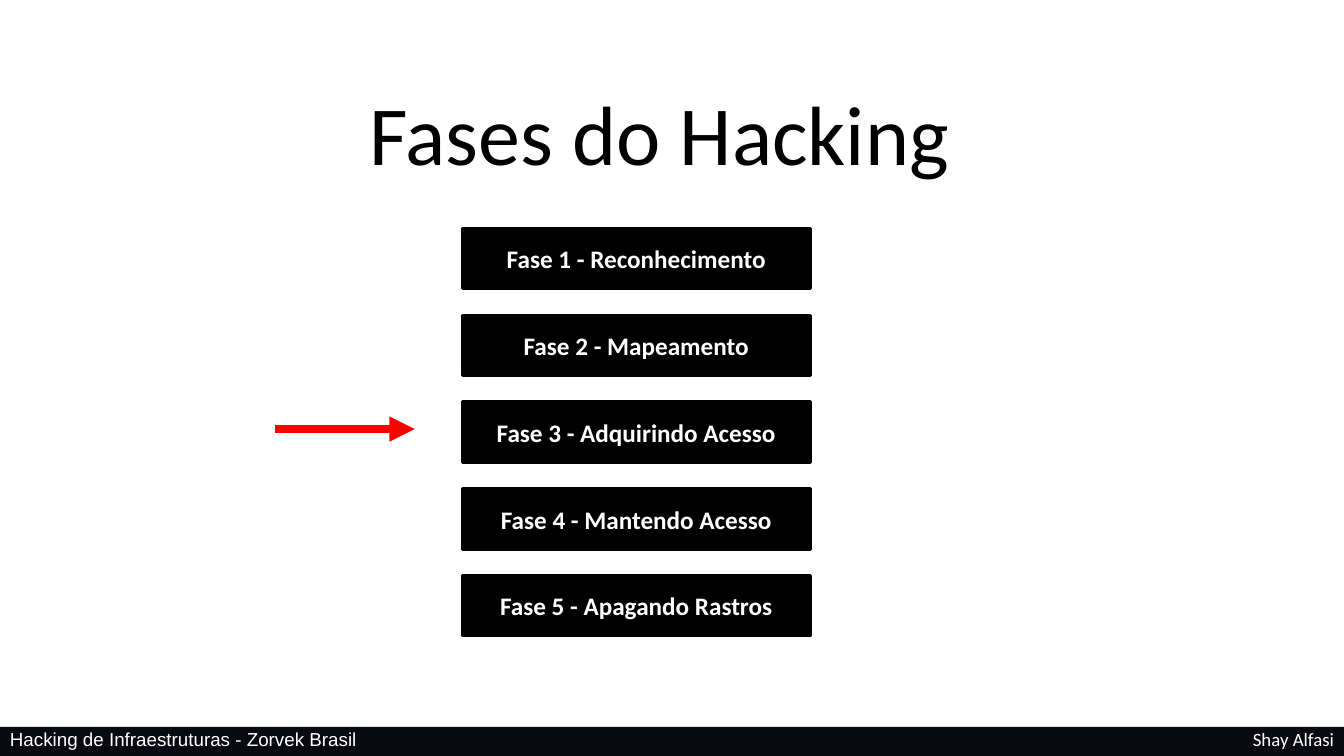
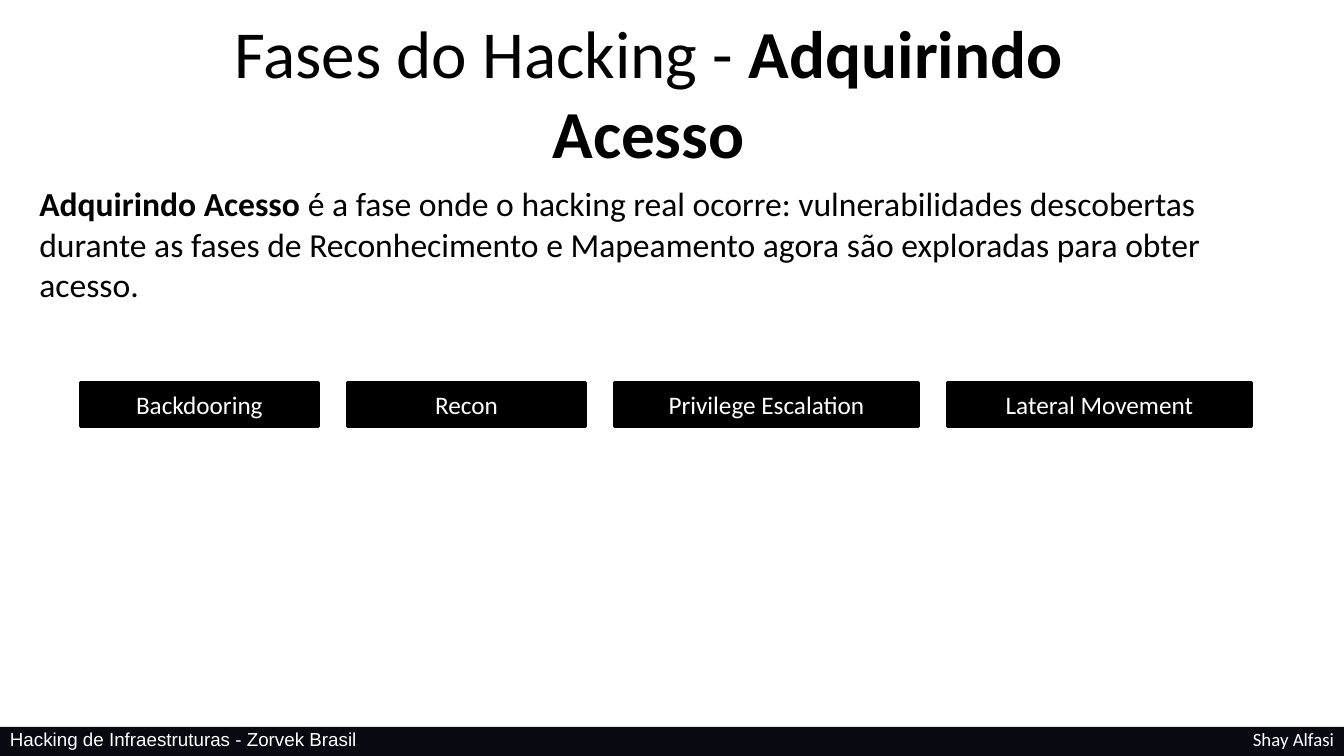
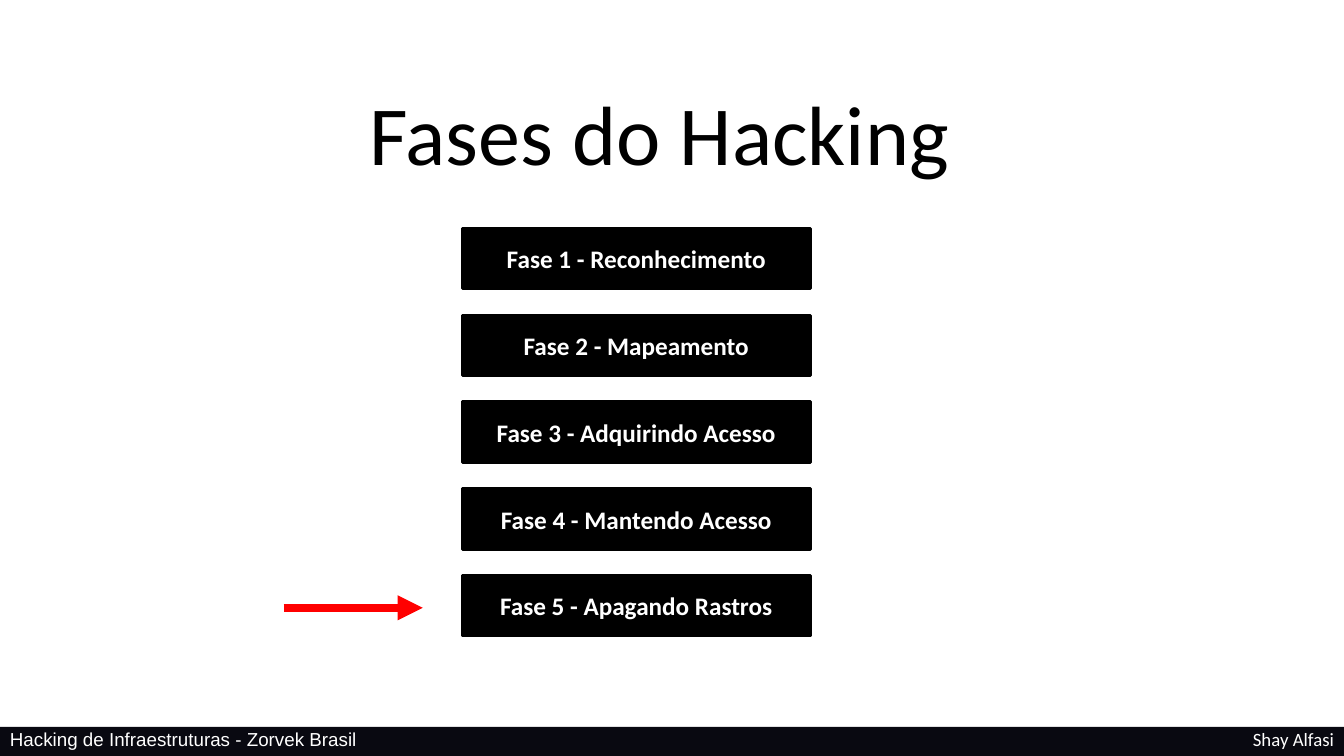
from dataclasses import dataclass
from itertools import accumulate

from lxml import etree
from pptx import Presentation
from pptx import util as u
from pptx.dml.color import RGBColor
from pptx.enum import shapes, text
from pptx.oxml import ns


@dataclass(frozen=True)
class Theme:
    width: float = 960
    height: float = 540
    black: RGBColor = RGBColor(0, 0, 0)
    white: RGBColor = RGBColor(255, 255, 255)
    band: RGBColor = RGBColor(0x09, 0x09, 0x11)
    red: RGBColor = RGBColor(255, 0, 0)
    font: str = "Calibri"
    footer_font: str = "Arial"
    large_title: float = 60
    title: float = 48
    body: float = 24
    label: float = 18
    footer: float = 13.4


THEME = Theme()
LEFT, CENTER, RIGHT = (
    text.PP_ALIGN.LEFT, text.PP_ALIGN.CENTER, text.PP_ALIGN.RIGHT)
TITLE_AND_CONTENT, TITLE_ONLY = 1, 5
PHASES = ["Reconhecimento", "Mapeamento", "Adquirindo Acesso",
          "Mantendo Acesso", "Apagando Rastros"]


def apply(target, values):
    for name, value in values.items():
        setattr(target, name, value)


def place(shape, box):
    apply(shape, dict(zip(("left", "top", "width", "height"), map(u.Pt, box))))


def write(shape, runs, size, color, align=LEFT, font=THEME.font,
          anchor=text.MSO_ANCHOR.TOP, insets=(7.2, 3.6, 7.2, 3.6), spacing=1.0):
    """Fill a shape with one paragraph of (wording, bold) runs."""
    frame = shape.text_frame
    sides = ("margin_left", "margin_top", "margin_right", "margin_bottom")
    apply(frame, {"word_wrap": True, "auto_size": text.MSO_AUTO_SIZE.NONE,
                  "vertical_anchor": anchor, **dict(zip(sides, map(u.Pt, insets)))})
    paragraph = frame.paragraphs[0]
    apply(paragraph, {"alignment": align, "line_spacing": spacing,
                      "space_before": u.Pt(0)})
    for wording, bold in runs:
        run = paragraph.add_run()
        run.text = wording
        apply(run.font, {"name": font, "size": u.Pt(size), "bold": bold})
        run.font.color.rgb = color
    return paragraph


def add_rectangle(slide, box, color, line_width=0):
    shape = slide.shapes.add_shape(shapes.MSO_SHAPE.RECTANGLE, *map(u.Pt, box))
    shape.shadow.inherit = False
    shape.fill.solid()
    shape.fill.fore_color.rgb = color
    if line_width:
        shape.line.color.rgb = color
        shape.line.width = u.Pt(line_width)
    else:
        shape.line.fill.background()
    return shape


def add_label(slide, box, wording, bold=False):
    shape = add_rectangle(slide, box, THEME.black, 2)
    write(shape, [(wording, bold)], THEME.label, THEME.white, CENTER,
          anchor=text.MSO_ANCHOR.MIDDLE)


def add_arrow(slide, left, middle, length):
    arrow = slide.shapes.add_connector(
        shapes.MSO_CONNECTOR.STRAIGHT,
        *map(u.Pt, (left, middle, left + length, middle)))
    arrow.line.color.rgb = THEME.red
    arrow.line.width = u.Pt(6)
    etree.SubElement(arrow.line._get_or_add_ln(), ns.qn("a:tailEnd"),
                     type="triangle")
    etree.SubElement(arrow.element.spPr, ns.qn("a:effectLst"))


def set_title(slide, box, runs, size, spacing=1.0):
    place(slide.shapes.title, box)
    write(slide.shapes.title, runs, size, THEME.black, CENTER,
          anchor=text.MSO_ANCHOR.BOTTOM, insets=(14.4, 0, 14.4, 0),
          spacing=spacing)


def add_master_footer(slide, box):
    """Draw the footer band and hand it over to the slide master."""
    left, top, width, height = box
    band = add_rectangle(slide, box, THEME.band)
    parts = [band]
    for wording, font, align, start, span in (
            ("Hacking de Infraestruturas - Zorvek Brasil", THEME.footer_font,
             LEFT, 0, 601),
            ("Shay Alfasi", THEME.font, RIGHT, width - 461, 461)):
        caption = slide.shapes.add_textbox(
            *map(u.Pt, (left + start, top - 2.9, span, height + 2.9)))
        write(caption, [(wording, False)], THEME.footer, THEME.white, align, font)
        parts.append(caption)
    master_tree = slide.slide_layout.slide_master.shapes.element
    for number, part in enumerate(parts, start=100):
        part.element.nvSpPr.cNvPr.set("id", str(number))
        master_tree.append(part.element)


def add_phase_stack(slide, box, phases, gap):
    left, top, width, height = box
    row = (height - gap * (len(phases) - 1)) / len(phases)
    for index, phase in enumerate(phases):
        add_label(slide, (left, top + index * (row + gap), width, row),
                  f"Fase {index + 1} - {phase}", bold=True)


def add_label_row(slide, box, labels, gap):
    left, top, _, height = box
    starts = accumulate((width + gap for _, width in labels), initial=left)
    for start, (wording, width) in zip(starts, labels):
        add_label(slide, (start, top, width, height), wording)


def add_phases_slide(presentation, arrow_left, arrow_middle):
    slide = presentation.slides.add_slide(presentation.slide_layouts[TITLE_ONLY])
    set_title(slide, (110.9, 36, 720, 95), [("Fases do Hacking", False)],
              THEME.large_title, spacing=0.9)
    add_phase_stack(slide, (330.2, 163.1, 248.6, 291.2), PHASES, 18.7)
    add_arrow(slide, arrow_left, arrow_middle, 99.4)
    return slide


def add_access_slide(presentation):
    slide = presentation.slides.add_slide(
        presentation.slide_layouts[TITLE_AND_CONTENT])
    set_title(slide, (86.4, 39.6, 753.8, 83.5),
              [("Fases do Hacking - ", False), ("Adquirindo Acesso", True)],
              THEME.title)

    # Definition of the phase
    body = slide.placeholders[1]
    place(body, (20.9, 127.4, 902.2, 93.6))
    paragraph = write(body, [
        ("Adquirindo Acesso ", True),
        ("é a fase onde o hacking real ocorre: vulnerabilidades descobertas "
         "durante as fases de Reconhecimento e Mapeamento agora são exploradas "
         "para obter acesso.", False)], THEME.body, THEME.black)
    properties = paragraph._p.get_or_add_pPr()
    for name in ("marL", "indent"):
        properties.set(name, "0")
    etree.SubElement(properties, ns.qn("a:buNone"))

    # Techniques
    add_label_row(slide, (57.4, 273.4, 836, 31.3),
                  [("Backdooring", 170), ("Recon", 170),
                   ("Privilege Escalation", 217), ("Lateral Movement", 217)], 20.8)


def main():
    presentation = Presentation()
    presentation.slide_width = u.Pt(THEME.width)
    presentation.slide_height = u.Pt(THEME.height)
    first = add_phases_slide(presentation, 196.8, 306.5)
    add_master_footer(first, (0, 519.3, THEME.width, 20.7))
    add_access_slide(presentation)
    add_phases_slide(presentation, 202.6, 434.2)
    presentation.save("out.pptx")


if __name__ == "__main__":
    main()
